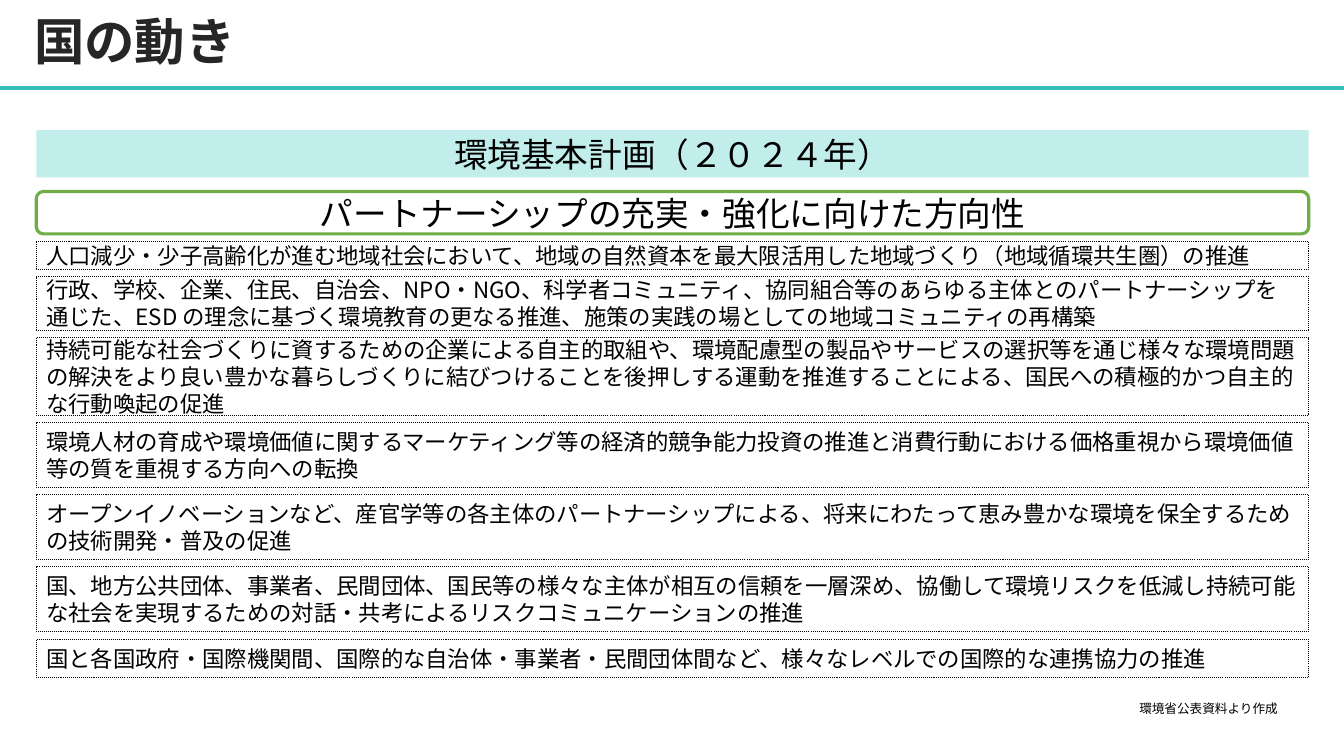
from lxml import etree
from pptx import Presentation
from pptx.dml.color import RGBColor
from pptx.enum.dml import MSO_LINE
from pptx.enum.lang import MSO_LANGUAGE_ID
from pptx.enum.shapes import MSO_CONNECTOR, MSO_SHAPE
from pptx.enum.text import MSO_ANCHOR, PP_ALIGN
from pptx.oxml.ns import qn
from pptx.util import Inches, Pt

RECTANGLE, ROUNDED = MSO_SHAPE.RECTANGLE, MSO_SHAPE.ROUNDED_RECTANGLE
LEFT, CENTER, RIGHT = PP_ALIGN.LEFT, PP_ALIGN.CENTER, PP_ALIGN.RIGHT
TOP, MIDDLE = MSO_ANCHOR.TOP, MSO_ANCHOR.MIDDLE
STRAIGHT = MSO_CONNECTOR.STRAIGHT
DOTTED = MSO_LINE.ROUND_DOT
JAPANESE = MSO_LANGUAGE_ID.JAPANESE

FONT = "Noto Sans CJK JP"
BLACK = RGBColor(0x00, 0x00, 0x00)
TITLE_GRAY = RGBColor(0x26, 0x26, 0x26)
TEAL = RGBColor(0x37, 0xBF, 0xB9)
PALE_TEAL = RGBColor(0xC1, 0xED, 0xEB)
GREEN = RGBColor(0x70, 0xAD, 0x47)

PAGE_WIDTH = 13.33
BOX_LEFT, BOX_WIDTH = 0.36, 12.62
LIST_TOP, LIST_BOTTOM = 2.4, 6.72

# Box height in inches, and wording
DIRECTIONS = [
    (0.27, "人口減少・少子高齢化が進む地域社会において、地域の自然資本を最大限活用した"
           "地域づくり（地域循環共生圏）の推進"),
    (0.53, "行政、学校、企業、住民、自治会、NPO・NGO、科学者コミュニティ、協同組合等の"
           "あらゆる主体とのパートナーシップを通じた、ESD の理念に基づく環境教育の"
           "更なる推進、施策の実践の場としての地域コミュニティの再構築"),
    (0.77, "持続可能な社会づくりに資するための企業による自主的取組や、環境配慮型の製品や"
           "サービスの選択等を通じ様々な環境問題の解決をより良い豊かな暮らしづくりに"
           "結びつけることを後押しする運動を推進することによる、国民への積極的かつ"
           "自主的な行動喚起の促進"),
    (0.64, "環境人材の育成や環境価値に関するマーケティング等の経済的競争能力投資の推進と"
           "消費行動における価格重視から環境価値等の質を重視する方向への転換"),
    (0.64, "オープンイノベーションなど、産官学等の各主体のパートナーシップによる、"
           "将来にわたって恵み豊かな環境を保全するための技術開発・普及の促進"),
    (0.64, "国、地方公共団体、事業者、民間団体、国民等の様々な主体が相互の信頼を一層深め、"
           "協働して環境リスクを低減し持続可能な社会を実現するための対話・共考による"
           "リスクコミュニケーションの推進"),
    (0.38, "国と各国政府・国際機関間、国際的な自治体・事業者・民間団体間など、"
           "様々なレベルでの国際的な連携協力の推進"),
]


def write_text(shape, text, size, align=LEFT, anchor=MIDDLE, color=BLACK, bold=False):
    frame = shape.text_frame
    frame.text = text
    frame.word_wrap = True
    frame.vertical_anchor = anchor
    para = frame.paragraphs[0]
    para.alignment = align
    font = para.runs[0].font
    font.name = FONT
    font.size = Pt(size)
    font.bold = bold
    font.color.rgb = color
    font.language_id = JAPANESE
    latin = font._element.find(qn("a:latin"))
    east_asian = etree.Element(qn("a:ea"), typeface=FONT)
    latin.addnext(east_asian)
    return para


def add_label(page, left, top, width, height, text, size, **style):
    label = page.shapes.add_textbox(
        Inches(left), Inches(top), Inches(width), Inches(height))
    return write_text(label, text, size, **style)


def add_box(page, top, height, text, size, kind=RECTANGLE, align=LEFT, fill=None,
            line=None, line_width=0.75, dash=None):
    """Add a full-width text box shape; a colour of None means no fill or line."""
    box = page.shapes.add_shape(
        kind, Inches(BOX_LEFT), Inches(top), Inches(BOX_WIDTH), Inches(height))
    box.shadow.inherit = False
    if fill is None:
        box.fill.background()
    else:
        box.fill.solid()
        box.fill.fore_color.rgb = fill
    if line is None:
        box.line.fill.background()
    else:
        box.line.color.rgb = line
        box.line.width = Pt(line_width)
        box.line.dash_style = dash
    write_text(box, text, size, align)


def add_title_rule(page, top):
    rule = page.shapes.add_connector(
        STRAIGHT, 0, Inches(top), Inches(PAGE_WIDTH), Inches(top))
    rule.line.color.rgb = TEAL
    rule.line.width = Pt(3)
    etree.SubElement(rule._element.spPr, qn("a:effectLst"))


def add_directions(page):
    """Stack the dotted boxes with equal gaps between the list's top and bottom."""
    total = sum(height for height, _ in DIRECTIONS)
    gap = (LIST_BOTTOM - LIST_TOP - total) / (len(DIRECTIONS) - 1)
    top = LIST_TOP
    for height, text in DIRECTIONS:
        add_box(page, top, height, text, 16, line=BLACK, dash=DOTTED)
        top += height + gap


def main():
    deck = Presentation()
    deck.slide_width, deck.slide_height = Inches(PAGE_WIDTH), Inches(7.5)
    page = deck.slides.add_slide(deck.slide_layouts[6])

    add_title_rule(page, 0.87)
    title = add_label(page, 0.24, 0, 12.83, 0.87, "国の動き", 36,
                      color=TITLE_GRAY, bold=True)
    title.line_spacing = 0.9
    add_box(page, 1.29, 0.47, "環境基本計画（２０２４年）", 24,
            align=CENTER, fill=PALE_TEAL)
    add_box(page, 1.9, 0.42, "パートナーシップの充実・強化に向けた方向性", 24,
            kind=ROUNDED, align=CENTER, line=GREEN, line_width=2.25)
    add_directions(page)
    add_label(page, 8.17, 6.9, 4.6, 0.25, "環境省公表資料より作成", 9,
              align=RIGHT, anchor=TOP)

    deck.save("out.pptx")


if __name__ == "__main__":
    main()
